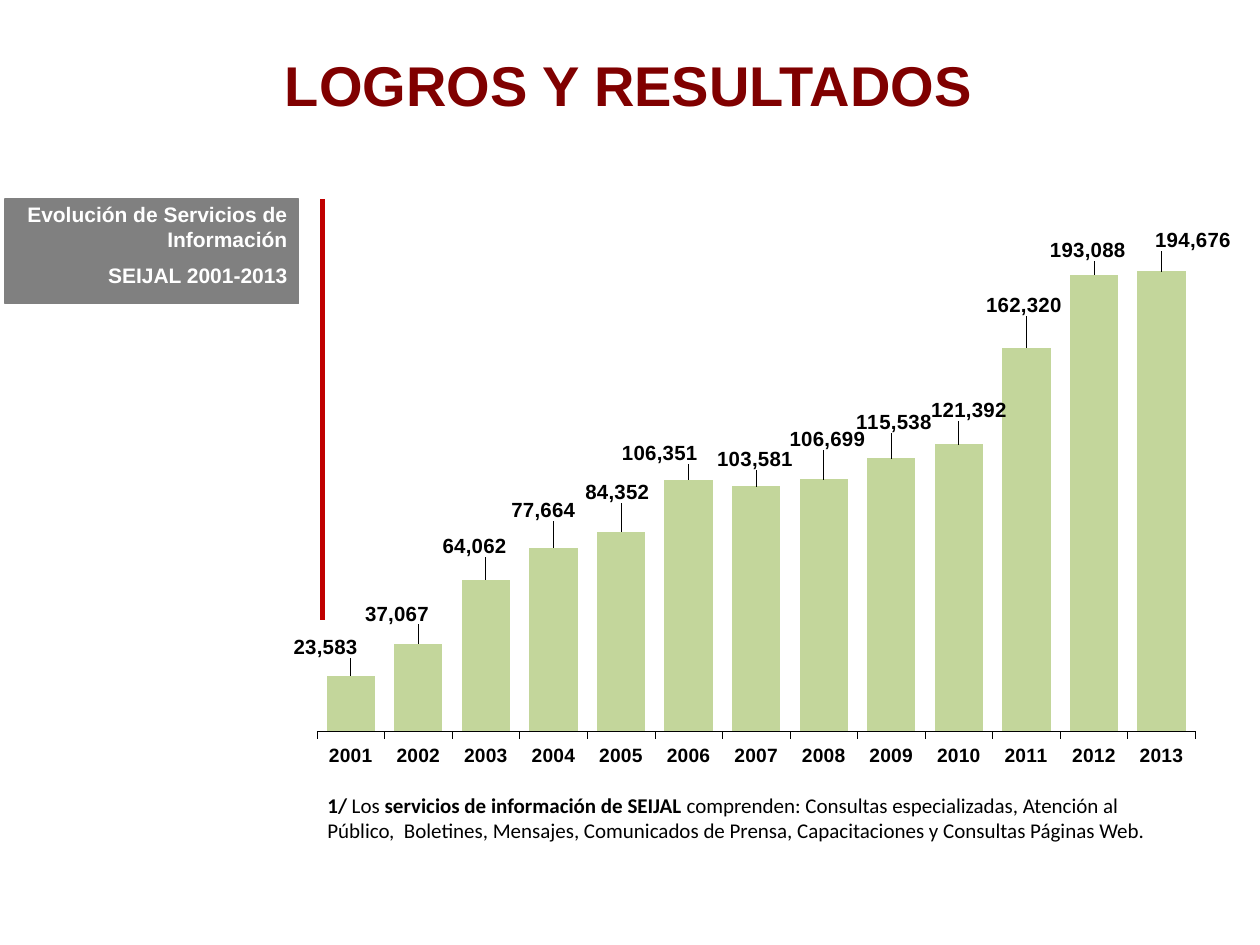
from lxml import etree
from pptx import Presentation
from pptx.chart.data import CategoryChartData
from pptx.dml.color import RGBColor
from pptx.enum.chart import XL_CHART_TYPE as ChartType
from pptx.enum.chart import XL_LABEL_POSITION as LabelPosition
from pptx.enum.chart import XL_TICK_LABEL_POSITION as TickLabelPosition
from pptx.enum.chart import XL_TICK_MARK as TickMark
from pptx.enum.shapes import MSO_CONNECTOR as Connector
from pptx.enum.shapes import MSO_SHAPE as Shape
from pptx.enum.text import PP_ALIGN as Align
from pptx.oxml.ns import qn
from pptx.util import Inches, Pt

# Year, services, and label shift from the bar's end (right, down) in inches
SERVICES = [
    ("2001", 23583, -0.2, -0.1),
    ("2002", 37067, -0.17, -0.11),
    ("2003", 64062, -0.09, -0.14),
    ("2004", 77664, -0.08, -0.17),
    ("2005", 84352, -0.03, -0.19),
    ("2006", 106351, -0.23, -0.08),
    ("2007", 103581, -0.01, -0.09),
    ("2008", 106699, 0.03, -0.19),
    ("2009", 115538, 0.02, -0.16),
    ("2010", 121392, 0.08, -0.14),
    ("2011", 162320, -0.02, -0.21),
    ("2012", 193088, -0.05, -0.07),
    ("2013", 194676, 0.25, -0.12),
]
NOTE = [
    ("1/", True),
    (" Los ", False),
    ("servicios de información de SEIJAL", True),
    (" comprenden: Consultas especializadas, Atención al Público,  Boletines, "
     "Mensajes, Comunicados de Prensa, Capacitaciones y Consultas Páginas Web.", False),
]


def color(value):
    return RGBColor.from_string(value)


def style_font(font, size, value, name="Arial", bold=True):
    font.name = name
    font.size = Pt(size)
    font.bold = bold
    font.color.rgb = color(value)


def add_text(page, left, top, width, height, paragraphs, size, value, align):
    box = page.shapes.add_textbox(Inches(left), Inches(top), Inches(width), Inches(height))
    box.text_frame.word_wrap = True
    box.text_frame.text = "\n".join(paragraphs)
    for number, para in enumerate(box.text_frame.paragraphs):
        para.alignment = align
        if number:
            para.space_before = Pt(size / 2)
        style_font(para.font, size, value)


def add_layout(parent, index, **values):
    """Insert a manual chart layout as the child of parent at index."""
    layout = etree.Element(qn("c:layout"))
    manual = etree.SubElement(layout, qn("c:manualLayout"))
    for tag, value in values.items():
        etree.SubElement(manual, qn(f"c:{tag}")).set("val", str(value))
    old = parent.find(qn("c:layout"))
    if old is not None:
        parent.remove(old)
    parent.insert(index, layout)


def add_services_chart(page, left, top, width, height):
    data = CategoryChartData(number_format="#,##0")
    data.categories = [row[0] for row in SERVICES]
    data.add_series("Series 1", [row[1] for row in SERVICES])
    chart = page.shapes.add_chart(
        ChartType.COLUMN_CLUSTERED, Inches(left), Inches(top),
        Inches(width), Inches(height), data).chart
    chart.has_legend = False
    chart.has_title = False
    style_font(chart.font, 14.6, "000000")

    years = chart.category_axis
    years.major_tick_mark = TickMark.OUTSIDE
    years.tick_label_position = TickLabelPosition.LOW
    years.format.line.color.rgb = color("000000")
    years.format.line.width = Pt(0.37)
    style_font(years.tick_labels.font, 11, "000000")
    amounts = chart.value_axis
    amounts.minimum_scale = 0
    amounts.maximum_scale = 250000
    amounts.has_major_gridlines = False
    amounts.visible = False

    plot = chart.plots[0]
    plot.gap_width = 40
    plot.vary_by_categories = False
    bars = plot.series[0]
    bars.format.fill.solid()
    bars.format.fill.fore_color.rgb = color("C3D69B")
    labels = bars.data_labels
    labels.show_value = True
    labels.number_format = "#,##0"
    labels.number_format_is_linked = False
    labels.position = LabelPosition.OUTSIDE_END
    style_font(labels.font, 11.7, "000000")
    for number, (_, _, right, down) in enumerate(SERVICES):
        label = bars.points[number].data_label
        label.position = LabelPosition.OUTSIDE_END
        style_font(label.font, 11.7, "000000")
    shifts = [row[2:] for row in SERVICES]
    for element, (right, down) in zip(bars.data_labels._element.findall(qn("c:dLbl")), shifts):
        add_layout(element, 1, x=round(right / width, 4), y=round(down / height, 4))
    add_layout(chart._chartSpace.chart.plotArea, 0, layoutTarget="inner", xMode="edge",
               yMode="edge", x=0.023, y=0.024, w=0.939, h=0.913)


def add_caption(page, left, top, width, height):
    """Grey panel with the chart's caption, aligned to its right edge."""
    panel = page.shapes.add_shape(
        Shape.RECTANGLE, Inches(left), Inches(top), Inches(width), Inches(height))
    panel.shadow.inherit = False
    panel.fill.solid()
    panel.fill.fore_color.rgb = color("808080")
    panel.line.color.rgb = color("808080")
    panel.line.width = Pt(0.75)
    add_text(page, left - 0.58, top - 0.03, width + 0.59, height - 0.02,
             ["Evolución de Servicios de Información", "SEIJAL 2001-2013"],
             12, "FFFFFF", Align.RIGHT)


def add_divider(page, left, top, height):
    line = page.shapes.add_connector(
        Connector.STRAIGHT, Inches(left), Inches(top), Inches(left), Inches(top + height))
    line.line.color.rgb = color("C00000")
    line.line.width = Pt(3)
    etree.SubElement(line._element.spPr, qn("a:effectLst"))


def add_note(page, left, top, width, height):
    box = page.shapes.add_textbox(Inches(left), Inches(top), Inches(width), Inches(height))
    box.text_frame.word_wrap = True
    para = box.text_frame.paragraphs[0]
    style_font(para.font, 12, "000000", "Calibri", False)
    for text, bold in NOTE:
        span = para.add_run()
        span.text = text
        span.font.bold = bold


def main():
    deck = Presentation()
    deck.slide_width = Inches(10)
    deck.slide_height = Inches(7.5)
    page = deck.slides.add_slide(deck.slide_layouts[6])
    add_text(page, 1.99, 0.35, 6, 0.64, ["LOGROS Y RESULTADOS"], 32, "800000", Align.CENTER)
    add_services_chart(page, 2.33, 0.99, 7.44, 5.14)
    add_divider(page, 2.56, 1.58, 3.34)
    add_note(page, 2.5, 6.24, 6.75, 0.51)
    add_caption(page, 0.04, 1.58, 2.33, 0.83)
    deck.save("out.pptx")


if __name__ == "__main__":
    main()
